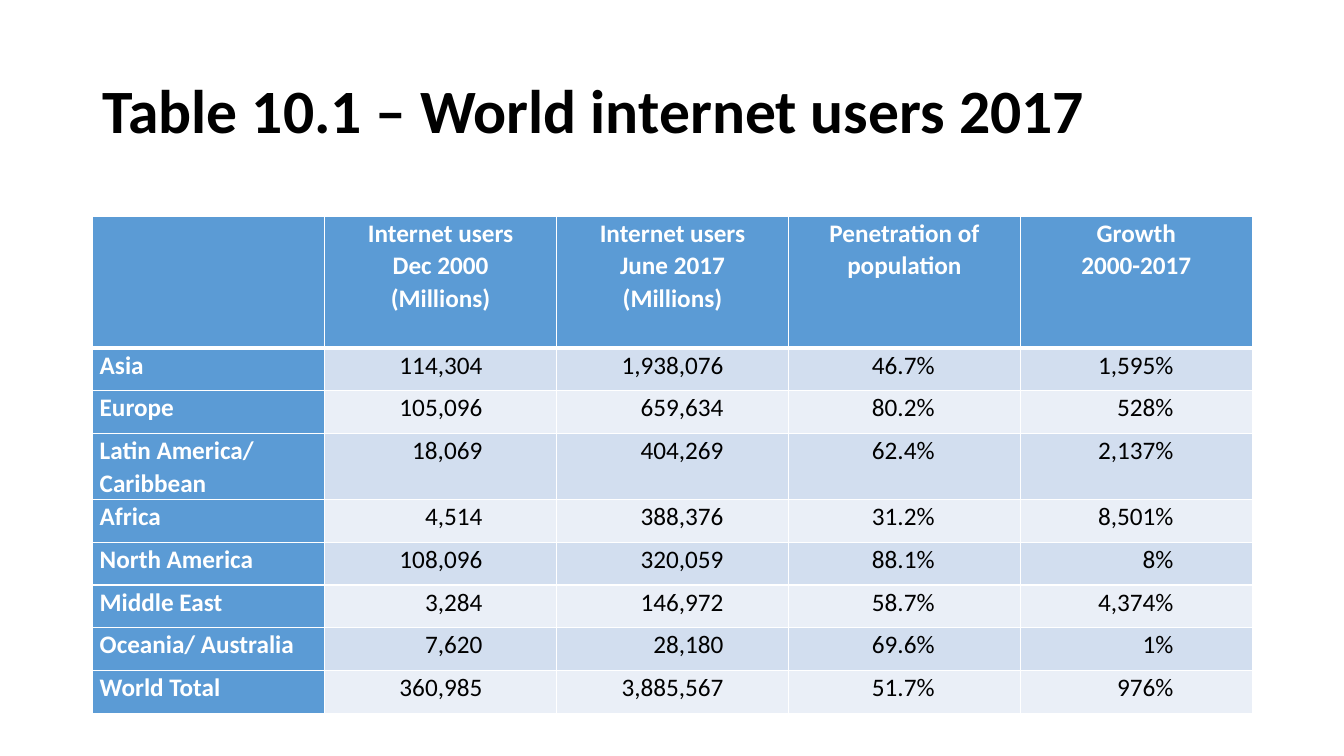
import dataclasses

import lxml.etree
import pptx
import pptx.dml.color
import pptx.enum.text
import pptx.oxml.ns
import pptx.util

ALIGN = pptx.enum.text.PP_ALIGN
ANCHOR = pptx.enum.text.MSO_ANCHOR


@dataclasses.dataclass
class Theme:
    font: str = "Calibri"
    ink: str = "000000"
    paper: str = "FFFFFF"
    head: str = "5B9BD5"
    bands: tuple = ("D2DEEF", "EAEFF7")
    title: int = 44
    body: int = 18
    thin: int = 1
    thick: int = 3


class Deck:
    # Grid units in inches, and the left edge in columns
    COL, ROW, LEFT = 2.3, 0.42, 0.4

    def __init__(self, theme):
        self.theme = theme
        self.prs = pptx.Presentation()
        self.prs.slide_width = pptx.util.Inches(13.33)
        self.prs.slide_height = pptx.util.Inches(7.5)
        self.slide = self.prs.slides.add_slide(self.prs.slide_layouts[6])

    def cols(self, n):
        return pptx.util.Inches(n * self.COL)

    def rows(self, n):
        return pptx.util.Inches(n * self.ROW)

    def text(self, frame, words, size, color, bold, align, space):
        """Put each line of words in its own paragraph."""
        for i, line in enumerate(words.split("\n")):
            para = frame.paragraphs[0] if i == 0 else frame.add_paragraph()
            para.alignment, para.line_spacing = align, space
            run = para.add_run()
            run.text = line
            font = run.font
            font.name, font.size, font.bold = self.theme.font, pptx.util.Pt(size), bold
            font.color.rgb = pptx.dml.color.RGBColor.from_string(color)

    def title(self, words, top, width, height):
        box = self.slide.shapes.add_textbox(
            self.cols(self.LEFT), self.rows(top), self.cols(width), self.rows(height))
        frame = box.text_frame
        frame.word_wrap = True
        frame.vertical_anchor = ANCHOR.MIDDLE
        self.text(frame, words, self.theme.title, self.theme.ink, True, ALIGN.LEFT, 0.9)

    def border(self, cell, sides):
        """Draw the cell's edges; sides maps L, R, T, B to a width in points."""
        props = cell._tc.get_or_add_tcPr()
        qn = pptx.oxml.ns.qn
        for side, width in sides.items():
            line = lxml.etree.SubElement(
                props, qn("a:ln" + side), w=str(pptx.util.Pt(width)))
            fill = lxml.etree.SubElement(line, qn("a:solidFill"))
            lxml.etree.SubElement(fill, qn("a:srgbClr"), val=self.theme.paper)

    def cell(self, cell, words, fill, color, bold, align, sides, inset):
        self.border(cell, sides)
        cell.fill.solid()
        cell.fill.fore_color.rgb = pptx.dml.color.RGBColor.from_string(fill)
        cell.margin_top = cell.margin_bottom = 0
        cell.margin_left, cell.margin_right = self.cols(0.03), self.cols(inset)
        if words:
            self.text(cell.text_frame, words, self.theme.body, color, bold, align, 1.07)

    def table(self, data, top, heights, insets):
        """Add a table with a header row, a header column and banded figures."""
        look = self.theme
        wide = len(data[0])
        grid = self.slide.shapes.add_table(
            len(data), wide, self.cols(self.LEFT), self.rows(top),
            self.cols(wide), self.rows(sum(heights))).table
        grid.first_col = True
        for col in grid.columns:
            col.width = self.cols(1)
        for r, line in enumerate(data):
            grid.rows[r].height = self.rows(heights[r])
            sides = {"L": look.thin, "R": look.thin,
                     "T": look.thick if r == 1 else look.thin,
                     "B": look.thick if r == 0 else look.thin}
            for c, words in enumerate(line):
                if r == 0:
                    style = look.head, look.paper, True, ALIGN.CENTER, sides, 0.03
                elif c == 0:
                    style = look.head, look.paper, True, ALIGN.LEFT, sides, 0.03
                else:
                    band = look.bands[(r - 1) % 2]
                    style = band, look.ink, False, ALIGN.RIGHT, sides, insets[c - 1]
                self.cell(grid.cell(r, c), words, *style)


USERS = [
    ("", "Internet users\nDec 2000\n(Millions)", "Internet users\nJune 2017\n(Millions)",
     "Penetration of population", "Growth\n2000-2017"),
    ("Asia", "114,304", "1,938,076", "46.7%", "1,595%"),
    ("Europe", "105,096", "659,634", "80.2%", "528%"),
    ("Latin America/ Caribbean", "18,069", "404,269", "62.4%", "2,137%"),
    ("Africa", "4,514", "388,376", "31.2%", "8,501%"),
    ("North America", "108,096", "320,059", "88.1%", "8%"),
    ("Middle East", "3,284", "146,972", "58.7%", "4,374%"),
    ("Oceania/ Australia", "7,620", "28,180", "69.6%", "1%"),
    ("World Total", "360,985", "3,885,567", "51.7%", "976%"),
]


def main():
    deck = Deck(Theme())
    # Heading
    deck.title("Table 10.1 – World internet users 2017", 0.95, 5, 3.45)
    # Users by region; the two-line region gets a taller row
    heights = [3.12] + [1.56 if len(row[0]) > 20 else 1.01 for row in USERS[1:]]
    deck.table(USERS, 5.1, heights, insets=(0.32, 0.28, 0.37, 0.34))
    deck.prs.save("out.pptx")


if __name__ == "__main__":
    main()
